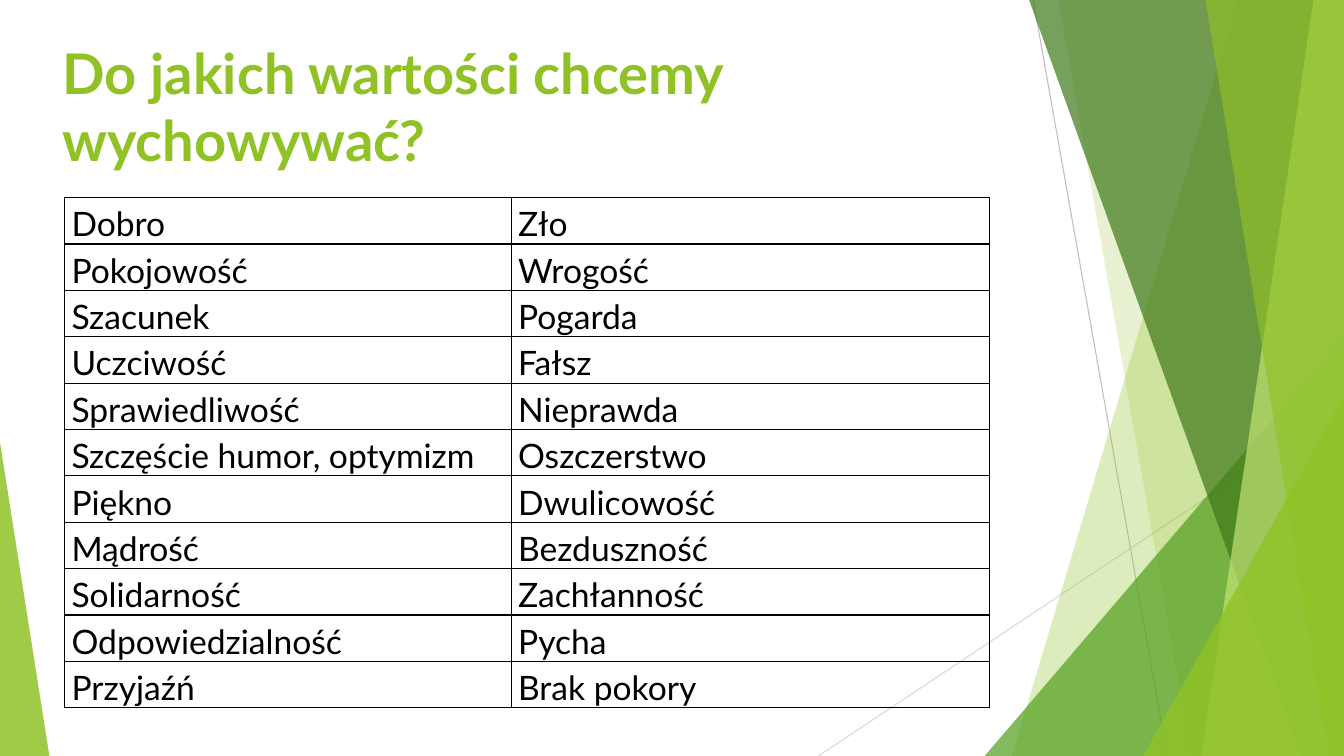
from lxml import etree
from pptx import Presentation
from pptx import util as u
from pptx.dml.color import RGBColor
from pptx.enum import shapes, text
from pptx.oxml.ns import qn

# Content
TITLE = "Do jakich wartości chcemy wychowywać?"
VALUES = [
    ("Dobro", "Zło"),
    ("Pokojowość", "Wrogość"),
    ("Szacunek", "Pogarda"),
    ("Uczciwość", "Fałsz"),
    ("Sprawiedliwość", "Nieprawda"),
    ("Szczęście humor, optymizm", "Oszczerstwo"),
    ("Piękno", "Dwulicowość"),
    ("Mądrość", "Bezduszność"),
    ("Solidarność", "Zachłanność"),
    ("Odpowiedzialność", "Pycha"),
    ("Przyjaźń", "Brak pokory"),
]
COLORS = {
    "lime": "90C226", "green": "54A021", "forest": "3F7819", "pale": "C0E474",
    "line": "BFBFBF", "faint": "D9D9D9", "black": "000000",
}
FONT = "Lato"
WIDTH, HEIGHT = 960, 540

# Decoration: rays are x1, y1, x2, y2, colour
RAYS = [(738, 0, 833.8, HEIGHT, "line"), (WIDTH, 290.2, 584.6, HEIGHT, "faint")]
# Shards reach the right edge: top x, bottom x, colour, opacity %
# Wedges stand on the bottom edge: left, top, width, apex, colour, opacity %
FACETS = [
    ("shard", 884.2, 722.9, "lime", 30),
    ("shard", 756, 851, "lime", 20),
    ("wedge", 703.4, 239.8, 256.6, 1, "green", 72),
    ("shard", 735.1, 929.5, "forest", 70),
    ("shard", 938.2, 858.2, "pale", 70),
    ("shard", 861.1, 949, "lime", 65),
    ("wedge", 816.5, 283, 143.5, 1, "lime", 80),
    ("wedge", 0, 316.1, 35.3, 0, "lime", 85),
]

# Table layout
TABLE_LEFT, TABLE_TOP = 46.1, 141.1
COLUMNS = (319, 342)
ROW_HEIGHT = 33.12
CELL_INSET = 5.04

deck = Presentation()
deck.slide_width, deck.slide_height = u.Pt(WIDTH), u.Pt(HEIGHT)
slide = deck.slides.add_slide(deck.slide_layouts[6])


def rgb(color):
    return RGBColor.from_string(COLORS[color])


def write(frame, words, *, size, color, bold=False, spacing=None, after=None):
    paragraph = frame.paragraphs[0]
    paragraph.alignment = text.PP_ALIGN.LEFT
    paragraph.line_spacing = spacing
    if after is not None:
        paragraph.space_after = u.Pt(after)
    run = paragraph.add_run()
    run.text = words
    run.font.name, run.font.size, run.font.bold = FONT, u.Pt(size), bold
    run.font.color.rgb = rgb(color)


def paint(facet, color, opacity):
    facet.shadow.inherit = False
    facet.line.fill.background()
    facet.fill.solid()
    facet.fill.fore_color.rgb = rgb(color)
    solid = facet.fill._xPr.find(qn("a:solidFill"))
    etree.SubElement(solid[0], qn("a:alpha"), val=str(opacity * 1000))


def add_shard(top_x, bottom_x):
    builder = slide.shapes.build_freeform(u.Pt(top_x), 0)
    corners = [(WIDTH, 0), (WIDTH, HEIGHT), (bottom_x, HEIGHT)]
    builder.add_line_segments([(u.Pt(x), u.Pt(y)) for x, y in corners], close=True)
    return builder.convert_to_shape()


def add_wedge(left, top, width, apex):
    wedge = slide.shapes.add_shape(
        shapes.MSO_SHAPE.ISOSCELES_TRIANGLE,
        u.Pt(left), u.Pt(top), u.Pt(width), u.Pt(HEIGHT - top))
    wedge.adjustments[0] = apex
    return wedge


def border(cell):
    properties = cell._tc.get_or_add_tcPr()
    for side in ("lnL", "lnR", "lnT", "lnB"):
        edge = etree.SubElement(properties, qn(f"a:{side}"), w=str(u.Pt(1)))
        solid = etree.SubElement(edge, qn("a:solidFill"))
        etree.SubElement(solid, qn("a:srgbClr"), val=COLORS["black"])


# Background rays and facets
for x1, y1, x2, y2, color in RAYS:
    ray = slide.shapes.add_connector(
        shapes.MSO_CONNECTOR.STRAIGHT, u.Pt(x1), u.Pt(y1), u.Pt(x2), u.Pt(y2))
    ray.line.color.rgb = rgb(color)
    ray.line.width = u.Pt(0.75)
    etree.SubElement(ray._element.spPr, qn("a:effectLst"))

for kind, *geometry, color, opacity in FACETS:
    add_facet = add_shard if kind == "shard" else add_wedge
    paint(add_facet(*geometry), color, opacity)

# Title
heading = slide.shapes.add_textbox(u.Pt(37.6), u.Pt(23.8), u.Pt(676.8), u.Pt(103.7))
heading.text_frame.word_wrap = True
heading.text_frame.vertical_anchor = text.MSO_ANCHOR.MIDDLE
write(heading.text_frame, TITLE, size=40, color="lime", bold=True)

# Table of values and their opposites
values = slide.shapes.add_table(
    len(VALUES), len(COLUMNS), u.Pt(TABLE_LEFT), u.Pt(TABLE_TOP),
    u.Pt(sum(COLUMNS)), u.Pt(ROW_HEIGHT * len(VALUES))).table
values.first_row = values.horz_banding = False
for column, width in zip(values.columns, COLUMNS):
    column.width = u.Pt(width)
for row, pair in zip(values.rows, VALUES):
    row.height = u.Pt(ROW_HEIGHT)
    for cell, words in zip(row.cells, pair):
        cell.margin_left = cell.margin_right = u.Pt(CELL_INSET)
        cell.margin_top = cell.margin_bottom = 0
        border(cell)
        cell.fill.background()
        write(cell.text_frame, words, size=24, color="black", spacing=1.15, after=10)

deck.save("out.pptx")
